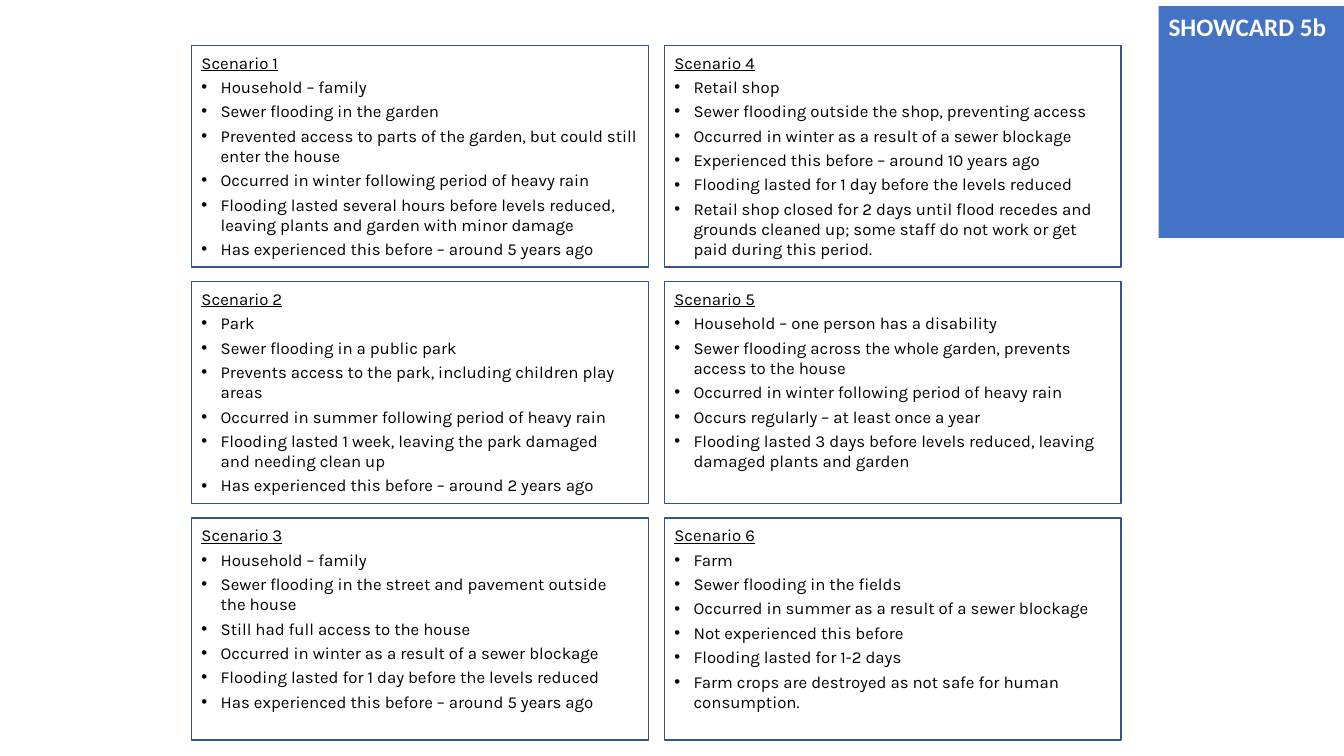
from pptx import Presentation
from pptx.dml.color import RGBColor
from pptx.enum.shapes import MSO_SHAPE
from pptx.enum.text import MSO_ANCHOR, MSO_AUTO_SIZE, PP_ALIGN
from pptx.oxml.ns import qn
from pptx.util import Inches, Pt
from lxml.etree import SubElement

COLOURS = {"border": "325491", "banner": "4472C4", "text": "000000", "banner_text": "FFFFFF"}
CARD_WIDTH, CARD_HEIGHT = 4.53, 2.2
GRID_LEFT, GRID_TOP = 1.9, 0.45
COLUMN_STEP, ROW_STEP = 4.69, 2.345
ROWS = 3

SCENARIOS = [
    (4.53, 2.17, [
        "Household – family",
        "Sewer flooding in the garden",
        "Prevented access to parts of the garden, but could still enter the house",
        "Occurred in winter following period of heavy rain",
        "Flooding lasted several hours before levels reduced, leaving plants and garden with minor damage",
        "Has experienced this before – around 5 years ago",
    ]),
    (4.38, 2.17, [
        "Park",
        "Sewer flooding in a public park",
        "Prevents access to the park, including children play areas",
        "Occurred in summer following period of heavy rain",
        "Flooding lasted 1 week, leaving the park damaged and needing clean up",
        "Has experienced this before – around 2 years ago",
    ]),
    (4.38, 1.97, [
        "Household – family",
        "Sewer flooding in the street and pavement outside the house",
        "Still had full access to the house",
        "Occurred in winter as a result of a sewer blockage",
        "Flooding lasted for 1 day before the levels reduced",
        "Has experienced this before – around 5 years ago",
    ]),
    (4.38, 2.17, [
        "Retail shop",
        "Sewer flooding outside the shop, preventing access",
        "Occurred in winter as a result of a sewer blockage",
        "Experienced this before – around 10 years ago",
        "Flooding lasted for 1 day before the levels reduced",
        "Retail shop closed for 2 days until flood recedes and grounds cleaned up; "
        "some staff do not work or get paid during this period.",
    ]),
    (4.38, 1.93, [
        "Household – one person has a disability",
        "Sewer flooding across the whole garden, prevents access to the house",
        "Occurred in winter following period of heavy rain",
        "Occurs regularly – at least once a year",
        "Flooding lasted 3 days before levels reduced, leaving damaged plants and garden",
    ]),
    (4.38, 1.97, [
        "Farm",
        "Sewer flooding in the fields",
        "Occurred in summer as a result of a sewer blockage",
        "Not experienced this before",
        "Flooding lasted for 1-2 days",
        "Farm crops are destroyed as not safe for human consumption.",
    ]),
]


def colour(name):
    return RGBColor.from_string(COLOURS[name])


def write(para, text, size=12, font="Karla", shade="text", bold=False, underline=False,
          before=3, bullet=False):
    para.alignment = PP_ALIGN.LEFT
    para.space_before = Pt(before)
    span = para.add_run()
    span.text = text
    span.font.size = Pt(size)
    span.font.name = font
    span.font.bold = bold
    span.font.underline = underline
    span.font.color.rgb = colour(shade)
    if bullet:
        properties = para._p.get_or_add_pPr()
        properties.set("marL", str(Inches(0.19)))
        properties.set("indent", str(-Inches(0.19)))
        SubElement(properties, qn("a:buFont"), typeface="Arial")
        SubElement(properties, qn("a:buChar"), char="•")


def add_scenario(page, left, top, heading, text_width, text_height, points):
    border = page.shapes.add_shape(MSO_SHAPE.RECTANGLE, Inches(left), Inches(top),
                                   Inches(CARD_WIDTH), Inches(CARD_HEIGHT))
    border.shadow.inherit = False
    border.fill.background()
    border.line.color.rgb = colour("border")
    border.line.width = Pt(1)

    box = page.shapes.add_textbox(Inches(left), Inches(top + 0.02),
                                  Inches(text_width), Inches(text_height))
    frame = box.text_frame
    frame.word_wrap = True
    frame.auto_size = MSO_AUTO_SIZE.SHAPE_TO_FIT_TEXT
    write(frame.paragraphs[0], heading, underline=True)
    for point in points:
        write(frame.add_paragraph(), point, bullet=True)


def add_banner(page, left, top, width, height):
    banner = page.shapes.title
    banner.left, banner.top = Inches(left), Inches(top)
    banner.width, banner.height = Inches(width), Inches(height)
    banner.fill.solid()
    banner.fill.fore_color.rgb = colour("banner")
    frame = banner.text_frame
    frame.word_wrap = False
    frame.auto_size = MSO_AUTO_SIZE.SHAPE_TO_FIT_TEXT
    frame.vertical_anchor = MSO_ANCHOR.TOP
    write(frame.paragraphs[0], "SHOWCARD 5b", size=18, font="Calibri",
          shade="banner_text", bold=True, before=0)


def main():
    deck = Presentation()
    deck.slide_width, deck.slide_height = Inches(13.33), Inches(7.5)
    page = deck.slides.add_slide(deck.slide_layouts[5])
    add_banner(page, 11.49, 0.06, 1.84, 0.4)
    for index, (text_width, text_height, points) in enumerate(SCENARIOS):
        column, row = divmod(index, ROWS)
        add_scenario(page, GRID_LEFT + column * COLUMN_STEP, GRID_TOP + row * ROW_STEP,
                     f"Scenario {index + 1}", text_width, text_height, points)
    deck.save("out.pptx")


if __name__ == "__main__":
    main()
